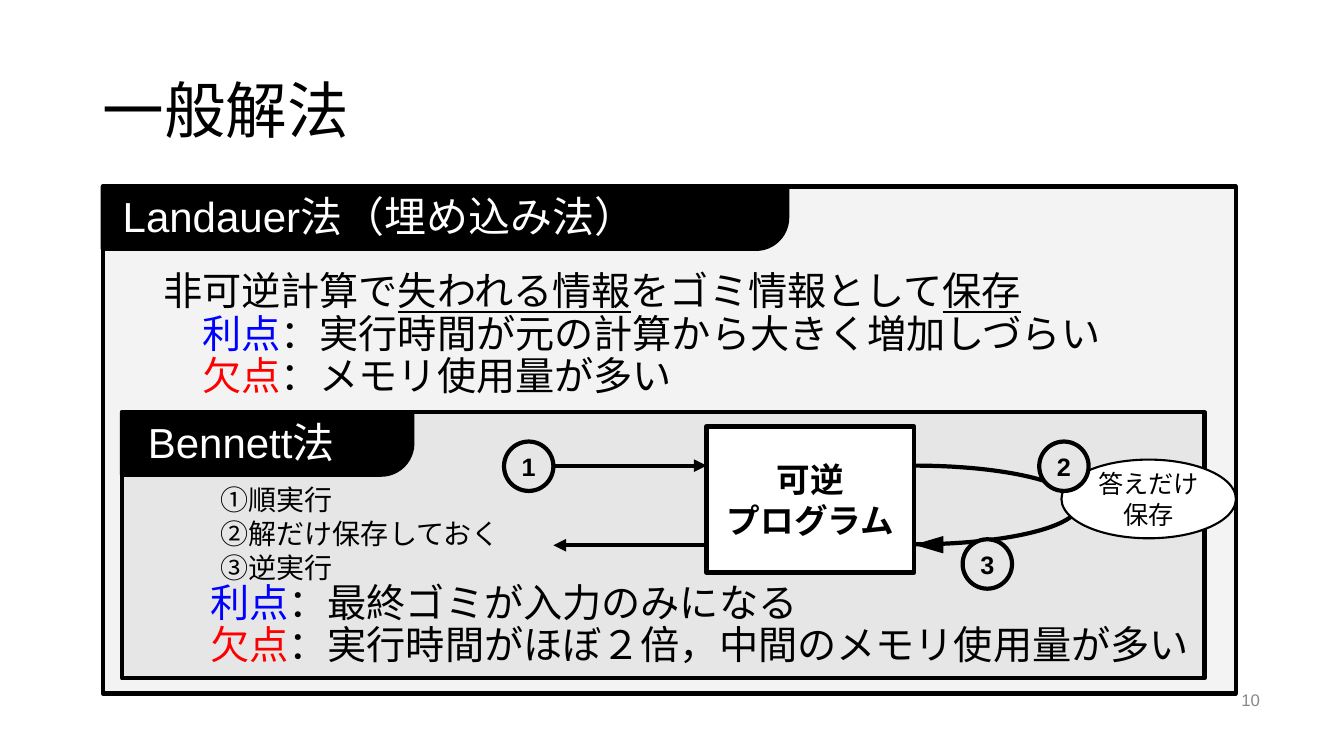
from dataclasses import dataclass

import lxml.etree
import pptx
import pptx.dml.color
import pptx.enum.shapes
import pptx.enum.text
import pptx.oxml.ns
import pptx.util

Pt = pptx.util.Pt
SHAPE = pptx.enum.shapes.MSO_SHAPE
ALIGN = pptx.enum.text.PP_ALIGN
ANCHOR = pptx.enum.text.MSO_ANCHOR
BLACK, WHITE, BLUE, RED = "000000", "FFFFFF", "0000FF", "FF0000"
PALE, GRAY, MUTED = "F3F3F3", "E7E6E6", "888888"
CIRCLE_SIZE = 35.3
TAB_HEIGHT = 44.6


@dataclass
class Box:
    left: float
    top: float
    width: float
    height: float


@dataclass
class Piece:
    text: str
    color: str = BLACK
    underline: bool = False


@dataclass
class Line:
    pieces: list[Piece]
    indent: float = 0


@dataclass
class Panel:
    box: Box
    fill: str
    lines: list[Line]
    anchor: ANCHOR
    top_inset: float
    tab_width: float
    heading: str
    heading_left: float


@dataclass
class Arrow:
    y: float
    end: str


def rgb(color: str) -> pptx.dml.color.RGBColor:
    return pptx.dml.color.RGBColor.from_string(color)


def lengths(box: Box) -> list[int]:
    return [Pt(value) for value in (box.left, box.top, box.width, box.height)]


def place(shape, box: Box) -> None:
    shape.left, shape.top, shape.width, shape.height = lengths(box)


def add_shape(slide, kind: SHAPE, box: Box, fill: str, line_width: float = 3):
    shape = slide.shapes.add_shape(kind, *lengths(box))
    shape.shadow.inherit = False
    shape.fill.solid()
    shape.fill.fore_color.rgb = rgb(fill)
    shape.line.color.rgb = rgb(BLACK)
    shape.line.width = Pt(line_width)
    return shape


def set_frame(shape, anchor: ANCHOR, side: float, top: float, bottom: float):
    frame = shape.text_frame
    frame.word_wrap = True
    frame.auto_size = pptx.enum.text.MSO_AUTO_SIZE.NONE
    frame.vertical_anchor = anchor
    frame.margin_left = frame.margin_right = Pt(side)
    frame.margin_top, frame.margin_bottom = Pt(top), Pt(bottom)
    return frame


def format_run(run, size: float, color: str, bold: bool = False) -> None:
    run.font.name = "Arial"
    run.font.size = Pt(size)
    run.font.bold = bold
    run.font.color.rgb = rgb(color)


def write(shape, text: str, size: float, color: str = BLACK, align: ALIGN = ALIGN.LEFT,
          anchor: ANCHOR = ANCHOR.MIDDLE, bold: bool = False, spacing: float = 1,
          side: float = 7.2, top: float = 3.6) -> None:
    frame = set_frame(shape, anchor, side, top, top)
    frame.text = text
    for paragraph in frame.paragraphs:
        paragraph.alignment = align
        paragraph.line_spacing = spacing
        paragraph.space_before = Pt(0)
        for run in paragraph.runs:
            format_run(run, size, color, bold)


def write_lines(frame, lines: list[Line]) -> None:
    for number, line in enumerate(lines):
        paragraph = frame.add_paragraph() if number else frame.paragraphs[0]
        paragraph.alignment = ALIGN.LEFT
        paragraph.line_spacing = 0.9
        properties = paragraph._p.get_or_add_pPr()
        properties.set("marL", str(Pt(line.indent)))
        properties.set("indent", "0")
        for piece in line.pieces:
            run = paragraph.add_run()
            run.text = piece.text
            format_run(run, 28, piece.color)
            run.font.underline = piece.underline


def add_panel(slide, panel: Panel) -> None:
    shape = add_shape(slide, SHAPE.RECTANGLE, panel.box, panel.fill)
    frame = set_frame(shape, panel.anchor, 7.2, panel.top_inset, 7.2)
    write_lines(frame, panel.lines)


def add_tab(slide, panel: Panel) -> None:
    left, top = panel.box.left, panel.box.top
    tab = add_shape(slide, SHAPE.ROUND_1_RECTANGLE,
                    Box(left, top, panel.tab_width, TAB_HEIGHT), BLACK)
    tab.adjustments[0] = 0.5
    tab.element.spPr.xfrm.set("flipV", "1")
    heading = slide.shapes.add_textbox(
        *lengths(Box(panel.heading_left, top, panel.tab_width - 40, TAB_HEIGHT)))
    write(heading, panel.heading, 30, WHITE, anchor=ANCHOR.TOP, spacing=0.9, top=7.2)


def add_arrow(slide, arrow: Arrow) -> None:
    connector = slide.shapes.add_connector(
        pptx.enum.shapes.MSO_CONNECTOR.STRAIGHT,
        Pt(395.3), Pt(arrow.y), Pt(504.7), Pt(arrow.y))
    connector.line.color.rgb = rgb(BLACK)
    connector.line.width = Pt(3)
    qn = pptx.oxml.ns.qn
    lxml.etree.SubElement(connector.line._get_or_add_ln(), qn(arrow.end), type="triangle")
    lxml.etree.SubElement(connector.element.spPr, qn("a:effectLst"))


def pros_and_cons(pro: str, con: str, indent: float) -> list[Line]:
    return [Line([Piece("利点", BLUE), Piece("：" + pro)], indent),
            Line([Piece("欠点", RED), Piece("：" + con)], indent)]


PANELS = [
    Panel(Box(73.4, 133.2, 809.3, 362.2), PALE, [
        Line([Piece("非可逆計算で"), Piece("失われる情報", underline=True),
              Piece("をゴミ情報として"), Piece("保存", underline=True)], 36),
        *pros_and_cons("実行時間が元の計算から大きく増加しづらい", "メモリ使用量が多い", 64),
    ], ANCHOR.TOP, 61, 488.9, "Landauer法（埋め込み法）", 80.6),
    Panel(Box(87.1, 294.5, 773.3, 190.1), GRAY, pros_and_cons(
        "最終ゴミが入力のみになる", "実行時間がほぼ２倍，中間のメモリ使用量が多い", 56),
        ANCHOR.BOTTOM, 7.2, 207.4, "Bennett法", 98.6),
]
ARROWS = [Arrow(332.6, "a:tailEnd"), Arrow(389.5, "a:headEnd")]
STEP_CORNERS = [(360, 315.4), (742.3, 315.4), (687.6, 385.2)]


def main() -> None:
    presentation = pptx.Presentation()
    presentation.slide_width, presentation.slide_height = Pt(960), Pt(540)
    slide = presentation.slides.add_slide(presentation.slide_layouts[1])
    title, steps = slide.shapes.title, slide.placeholders[1]
    place(title, Box(66.2, 28.8, 828, 104.4))
    write(title, "一般解法", 44, spacing=0.9)

    for panel in PANELS:
        add_panel(slide, panel)
    page = slide.shapes.add_textbox(*lengths(Box(691.2, 485.3, 216, 28.8)))
    write(page, "10", 12, MUTED, ALIGN.RIGHT)
    for panel in PANELS:
        add_tab(slide, panel)

    add_shape(slide, SHAPE.OVAL, Box(536.4, 332.6, 234, 56.2), GRAY)
    for arrow in ARROWS:
        add_arrow(slide, arrow)
    program = add_shape(slide, SHAPE.RECTANGLE, Box(504.7, 304.6, 148.3, 104.4), WHITE)
    write(program, "可逆\nプログラム", 24, align=ALIGN.CENTER, bold=True)
    answer = add_shape(slide, SHAPE.OVAL, Box(758.2, 328.3, 124.6, 56.2), WHITE, 1.5)
    write(answer, "答えだけ\n保存", 18, align=ALIGN.CENTER, side=0, top=0)
    for number, (left, top) in enumerate(STEP_CORNERS, 1):
        circle = add_shape(slide, SHAPE.OVAL, Box(left, top, CIRCLE_SIZE, CIRCLE_SIZE), GRAY)
        write(circle, str(number), 18, align=ALIGN.CENTER, bold=True, side=0, top=0)
    arrowhead = add_shape(slide, SHAPE.ISOSCELES_TRIANGLE, Box(658.1, 379.4, 11.5, 19.4), BLACK, 0.75)
    arrowhead.rotation = 270

    place(steps, Box(150.5, 337.7, 756.7, 88.6))
    write(steps, "①順実行\n②解だけ保存しておく\n③逆実行", 20, anchor=ANCHOR.TOP, top=7.2)
    for paragraph in steps.text_frame.paragraphs:
        properties = paragraph._p.get_or_add_pPr()
        properties.set("marL", "0")
        properties.set("indent", "0")
        lxml.etree.SubElement(properties, pptx.oxml.ns.qn("a:buNone"))
    steps.element.getparent().append(steps.element)
    presentation.save("out.pptx")


if __name__ == "__main__":
    main()
